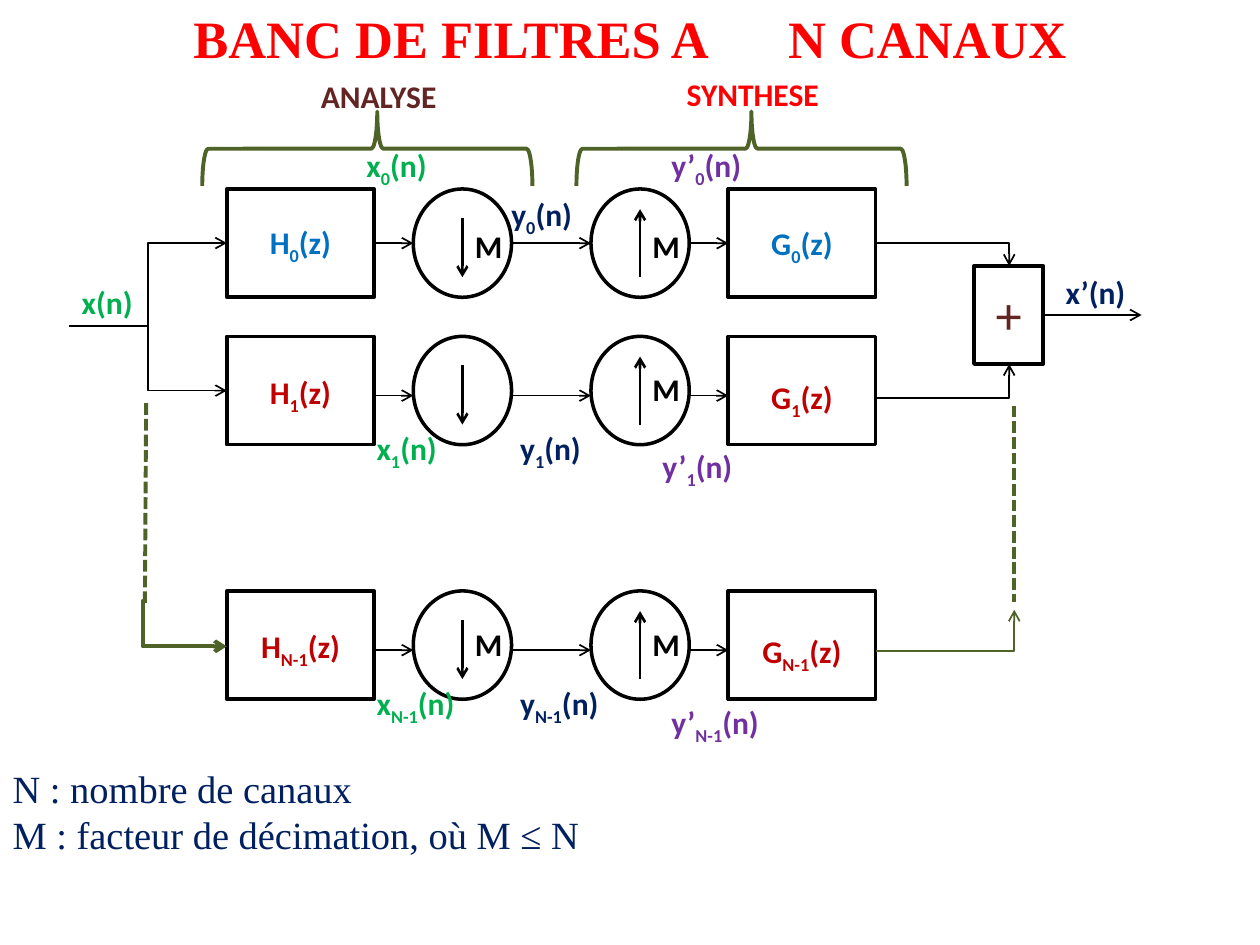
from dataclasses import dataclass

from lxml import etree
from pptx import Presentation
from pptx.dml.color import RGBColor
from pptx.enum.dml import MSO_LINE
from pptx.enum.shapes import MSO_CONNECTOR, MSO_SHAPE
from pptx.enum.text import MSO_ANCHOR, MSO_AUTO_SIZE, PP_ALIGN
from pptx.oxml.ns import qn
from pptx.util import Inches, Pt

RECT, OVAL, BRACE = MSO_SHAPE.RECTANGLE, MSO_SHAPE.OVAL, MSO_SHAPE.LEFT_BRACE
STRAIGHT, ELBOW = MSO_CONNECTOR.STRAIGHT, MSO_CONNECTOR.ELBOW
LEFT, CENTER = PP_ALIGN.LEFT, PP_ALIGN.CENTER
TOP, NO_FIT = MSO_ANCHOR.TOP, MSO_AUTO_SIZE.NONE
DASH = MSO_LINE.SQUARE_DOT
SIDE_LEFT, SIDE_RIGHT = 1, 3

BLACK, RED, BROWN, OLIVE = "000000", "FF0000", "632523", "4F6228"
GREEN, NAVY, PURPLE, BLUE, DARK_RED = "00B050", "002060", "7030A0", "0070C0", "C00000"
SERIF, SANS = "Times New Roman", "Calibri"

# Columns shared by all channels
ANALYSIS_X, DOWN_X, UP_X, SYNTHESIS_X = 1.8, 3.28, 4.69, 5.78
FILTER_W, SAMPLER_W, BLOCK_H = 1.17, 0.78, 0.86


@dataclass
class Label:
    text: str  # parts between underscores are subscripts
    left: float
    top: float
    width: float
    color: str
    align: PP_ALIGN = LEFT
    size: float = 18
    bold: bool = True
    height: float = 0.4


@dataclass
class Channel:
    index: str
    top: float
    wire_y: float
    color: str
    analysis_text_y: float
    synthesis_text_y: float
    down_text_y: float | None
    up_text_y: float
    x_at: tuple[float, float]
    y_at: tuple[float, float]
    output_at: tuple[float, float]
    label_w: float = 0.86


CHANNELS = [
    Channel("0", 1.5, 1.93, BLUE, 1.72, 1.73, 1.75, 1.75,
            (2.81, 1.11), (3.96, 1.5), (5.23, 1.11)),
    Channel("1", 2.67, 3.14, DARK_RED, 2.91, 2.95, None, 2.89,
            (2.89, 3.36), (4.03, 3.36), (5.16, 3.5)),
    Channel("N-1", 4.69, 5.16, DARK_RED, 4.93, 4.97, 4.91, 4.91,
            (2.89, 5.38), (4.03, 5.38), (5.23, 5.53), 1.09),
]


def rgb(color: str) -> RGBColor:
    return RGBColor.from_string(color)


def style_font(font, name: str, size: float, color: str, bold: bool) -> None:
    font.name, font.size, font.bold = name, Pt(size), bold
    font.color.rgb = rgb(color)


def move(shape, left: float, top: float, width: float, height: float) -> None:
    shape.left, shape.top = Inches(left), Inches(top)
    shape.width, shape.height = Inches(width), Inches(height)


def add_outline(page, kind, left: float, top: float, width: float, height: float,
                color: str = BLACK, weight: float = 2):
    shape = page.shapes.add_shape(kind, Inches(left), Inches(top), Inches(width), Inches(height))
    shape.shadow.inherit = False
    shape.fill.background()
    shape.line.color.rgb = rgb(color)
    shape.line.width = Pt(weight)
    return shape


def add_line(page, start: tuple, end: tuple, weight: float = 1, color: str = BLACK,
             kind=STRAIGHT, arrow: bool = True, dash=None):
    line = page.shapes.add_connector(kind, *(Inches(value) for value in (*start, *end)))
    line.line.color.rgb = rgb(color)
    line.line.width = Pt(weight)
    if dash is not None:
        line.line.dash_style = dash
    properties = line._element.spPr
    if arrow:
        etree.SubElement(properties.find(qn("a:ln")), qn("a:tailEnd"), type="arrow")
    etree.SubElement(properties, qn("a:effectLst"))
    return line


def add_elbow(page, start: tuple, end: tuple, preset: str = "bentConnector3",
              bend: float | None = None, weight: float = 1, color: str = BLACK) -> None:
    line = add_line(page, start, end, weight, color, ELBOW)
    geometry = line._element.spPr.find(qn("a:prstGeom"))
    geometry.set("prst", preset)
    if bend is not None:
        guides = geometry.find(qn("a:avLst"))
        etree.SubElement(guides, qn("a:gd"), name="adj1", fmla=f"val {round(bend * 100000)}")


def add_label(page, label: Label) -> None:
    box = page.shapes.add_textbox(Inches(label.left), Inches(label.top),
                                  Inches(label.width), Inches(label.height))
    box.text_frame.word_wrap = True
    para = box.text_frame.paragraphs[0]
    para.alignment = label.align
    for number, part in enumerate(label.text.split("_")):
        span = para.add_run()
        span.text = part
        style_font(span.font, SANS, label.size, label.color, label.bold)
        if number % 2:
            span._r.get_or_add_rPr().set("baseline", "-25000")


def add_channel(page, channel: Channel) -> None:
    top, wire, name = channel.top, channel.wire_y, channel.index
    # Filters and samplers
    analysis = add_outline(page, RECT, ANALYSIS_X, top, FILTER_W, BLOCK_H)
    synthesis = add_outline(page, RECT, SYNTHESIS_X, top, FILTER_W, BLOCK_H)
    for left in (DOWN_X, UP_X):
        add_outline(page, OVAL, left, top, SAMPLER_W, BLOCK_H)
    down, up = DOWN_X + SAMPLER_W / 2, UP_X + SAMPLER_W / 2
    add_line(page, (down, top + 0.23), (down, top + 0.7), 1.5)
    add_line(page, (up, top + 0.7), (up, top + 0.16), 1.5)
    # Wires between the blocks
    inlet = add_line(page, (ANALYSIS_X + FILTER_W, wire), (DOWN_X, wire))
    add_line(page, (DOWN_X + SAMPLER_W, wire), (UP_X, wire))
    outlet = add_line(page, (UP_X + SAMPLER_W, wire), (SYNTHESIS_X, wire))
    if abs(wire - top - BLOCK_H / 2) < 0.01:
        inlet.begin_connect(analysis, SIDE_RIGHT)
        outlet.end_connect(synthesis, SIDE_LEFT)
    # Names of blocks and signals
    labels = [
        Label(f"H_{name}_(z)", ANALYSIS_X, channel.analysis_text_y, FILTER_W, channel.color, CENTER),
        Label(f"G_{name}_(z)", SYNTHESIS_X, channel.synthesis_text_y, FILTER_W, channel.color, CENTER),
        Label("M", up, channel.up_text_y, 0.47, BLACK),
        Label(f"x_{name}_(n)", *channel.x_at, channel.label_w, GREEN),
        Label(f"y_{name}_(n)", *channel.y_at, channel.label_w, NAVY),
        Label(f"y’_{name}_(n)", *channel.output_at, channel.label_w, PURPLE),
    ]
    if channel.down_text_y is not None:
        labels.append(Label("M", down, channel.down_text_y, 0.47, BLACK))
    for label in labels:
        add_label(page, label)


def fill_placeholders(page) -> None:
    title, body = page.placeholders
    move(title, 0, 0, 10, 0.61)
    move(body, 0, 6.02, 10, 0.84)
    for holder in (title, body):
        holder.text_frame.auto_size = NO_FIT
        holder.text_frame.vertical_anchor = TOP
    para = title.text_frame.paragraphs[0]
    para.alignment = CENTER
    for part in ("BANC DE FILTRES A", " ", "N CANAUX"):
        span = para.add_run()
        span.text = part
        style_font(span.font, SERIF, 30, RED, True)
        if part == " ":  # wide gap by letter spacing
            span._r.get_or_add_rPr().set("spc", "3750")
    body.text_frame.text = "N : nombre de canaux\nM : facteur de décimation, où M ≤ N"
    for para in body.text_frame.paragraphs:
        para.space_before = Pt(0)
        style_font(para.runs[0].font, SERIF, 22, NAVY, False)
        properties = para._p.get_or_add_pPr()
        properties.set("marL", "0")
        properties.set("indent", "0")
        etree.SubElement(properties, qn("a:buNone"))


def main() -> None:
    deck = Presentation()
    deck.slide_width, deck.slide_height = Inches(10), Inches(7.5)
    page = deck.slides.add_slide(deck.slide_layouts[1])
    fill_placeholders(page)
    for channel in CHANNELS:
        add_channel(page, channel)

    # Input split, adder and output
    for end_y in (1.93, 3.1):
        add_elbow(page, (0.55, 2.59), (ANALYSIS_X, end_y))
    adder = add_outline(page, RECT, 7.73, 2.11, 0.55, 0.78)
    for start_y, end_y in ((1.93, 2.11), (3.16, 2.89)):
        add_elbow(page, (6.95, start_y), (8.01, end_y), "bentConnector2")
    add_line(page, (8.28, 2.5), (9.06, 2.5)).begin_connect(adder, SIDE_RIGHT)

    # Dashed continuation to the last channel
    add_line(page, (1.16, 3.2), (1.15, 4.77), 2.25, OLIVE, arrow=False, dash=DASH)
    add_line(page, (8.05, 3.22), (8.05, 4.78), 2.25, OLIVE, arrow=False, dash=DASH)
    add_elbow(page, (1.17, 4.77), (ANALYSIS_X, 5.13), bend=-0.06, weight=2.25, color=OLIVE)
    add_elbow(page, (6.95, 5.17), (8.05, 4.84), bend=1, color=OLIVE)

    # Braces over the two halves
    for left in (2.62, 5.59):
        brace = add_outline(page, BRACE, left, -0.13, 0.59, 2.62, OLIVE, 2.25)
        brace.rotation = 90
        brace.adjustments[0], brace.adjustments[1] = 0.08, 0.47

    for label in (
        Label("ANALYSE", 1.64, 0.56, 2.73, BROWN, CENTER),
        Label("SYNTHESE", 4.61, 0.55, 2.73, RED, CENTER),
        Label("x(n)", 0.55, 2.2, 0.7, GREEN),
        Label("x’(n)", 8.36, 2.12, 0.7, NAVY),
        Label("+", 7.73, 2.19, 0.55, BROWN, CENTER, 30, False, 0.61),
    ):
        add_label(page, label)
    deck.save("out.pptx")


if __name__ == "__main__":
    main()
